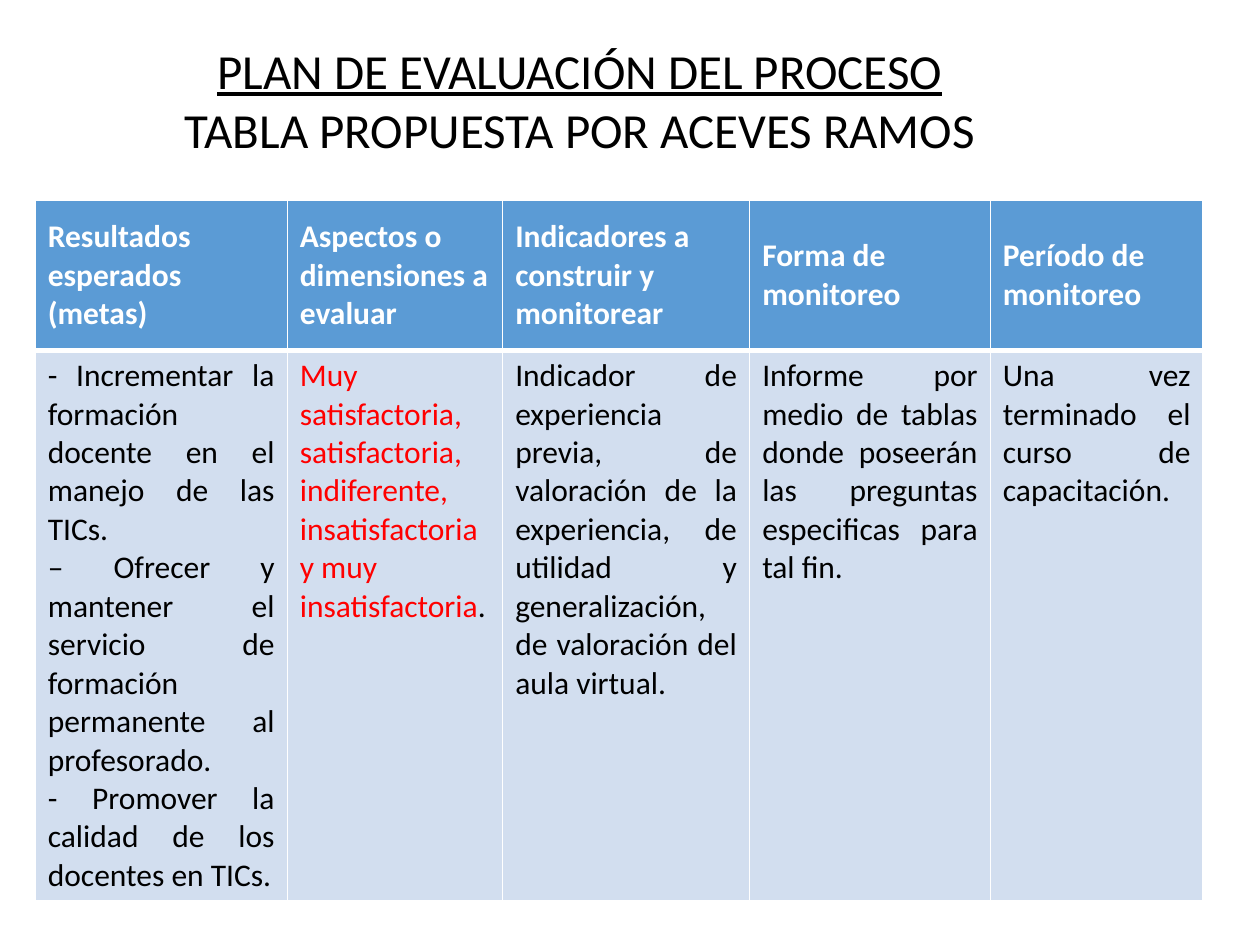
from dataclasses import dataclass

from lxml.etree import SubElement
from pptx import Presentation
from pptx.dml.color import RGBColor as Rgb
from pptx.enum.text import MSO_ANCHOR as Anchor, MSO_AUTO_SIZE as AutoSize, PP_ALIGN as Align
from pptx.oxml.ns import qn
from pptx.util import Inches, Pt


@dataclass(frozen=True)
class Theme:
    font: str = "Calibri"
    title_size: int = 28
    table_size: int = 18
    black: str = "000000"
    white: str = "FFFFFF"
    red: str = "FF0000"
    header_fill: str = "5B9BD5"
    body_fill: str = "D2DEEF"
    thin_line: int = 1
    thick_line: int = 3


THEME = Theme()


@dataclass(frozen=True)
class Span:
    text: str
    color: str = THEME.black
    bold: bool = False
    underline: bool = False


@dataclass(frozen=True)
class Column:
    width: float
    heading: str
    paras: tuple[tuple[Span, ...], ...]
    align: Align = Align.JUSTIFY


COLUMNS = (
    Column(2.0, "Resultados esperados (metas)", (
        (Span("- Incrementar la formación docente en el manejo de las TICs."),),
        (Span("– Ofrecer y mantener el servicio de formación permanente al profesorado."),),
        (Span("- Promover la calidad de los docentes en TICs."),),
    )),
    Column(1.71, "Aspectos o dimensiones a evaluar", ((
        Span("Muy satisfactoria, satisfactoria, indiferente, insatisfactoria "
             "y muy insatisfactoria", THEME.red),
        Span("."),
    ),), Align.LEFT),
    Column(1.96, "Indicadores a construir y monitorear", ((
        Span("Indicador de experiencia previa, de valoración de la experiencia, "
             "de utilidad y generalización, de valoración del aula virtual."),
    ),)),
    Column(1.91, "Forma de monitoreo", ((
        Span("Informe por medio de tablas donde poseerán las preguntas "
             "especificas para tal fin."),
    ),)),
    Column(1.69, "Período de monitoreo", ((
        Span("Una vez terminado el curso de capacitación."),
    ),)),
)
ROW_HEIGHTS = (1.19, 3.5)
TITLE = (
    (Span("PLAN DE EVALUACIÓN DEL PROCESO", underline=True),),
    (Span("TABLA PROPUESTA POR ACEVES RAMOS"),),
)


def write_paras(frame, paras: tuple[tuple[Span, ...], ...], size: int, align: Align) -> None:
    for index, spans in enumerate(paras):
        para = frame.add_paragraph() if index else frame.paragraphs[0]
        para.alignment = align
        for span in spans:
            run = para.add_run()
            run.text = span.text
            formats = {"name": THEME.font, "size": Pt(size),
                       "bold": span.bold, "underline": span.underline}
            for name, value in formats.items():
                setattr(run.font, name, value)
            run.font.color.rgb = Rgb.from_string(span.color)


def set_borders(cell, top: int, bottom: int) -> None:
    """Borders come before the fill in the cell properties."""
    properties = cell._tc.get_or_add_tcPr()
    widths = {"a:lnL": THEME.thin_line, "a:lnR": THEME.thin_line,
              "a:lnT": top, "a:lnB": bottom}
    for index, (tag, width) in enumerate(widths.items()):
        line = SubElement(properties, qn(tag), w=str(Pt(width)))
        fill = SubElement(line, qn("a:solidFill"))
        SubElement(fill, qn("a:srgbClr"), val=THEME.white)
        properties.insert(index, line)


def style_cell(cell, fill: str, anchor: Anchor, top: int, bottom: int) -> None:
    cell.fill.solid()
    cell.fill.fore_color.rgb = Rgb.from_string(fill)
    cell.vertical_anchor = anchor
    set_borders(cell, top, bottom)


def add_title(page) -> None:
    box = page.shapes.add_textbox(Inches(0.65), Inches(0.27), Inches(7.9), Inches(1.04))
    formats = {"word_wrap": True, "auto_size": AutoSize.SHAPE_TO_FIT_TEXT}
    for name, value in formats.items():
        setattr(box.text_frame, name, value)
    write_paras(box.text_frame, TITLE, THEME.title_size, Align.CENTER)


def add_plan_table(page) -> None:
    table = page.shapes.add_table(
        len(ROW_HEIGHTS), len(COLUMNS), Inches(0.28), Inches(1.59),
        Inches(sum(column.width for column in COLUMNS)), Inches(sum(ROW_HEIGHTS)),
    ).table
    for row, height in zip(table.rows, ROW_HEIGHTS):
        row.height = Inches(height)
    for index, column in enumerate(COLUMNS):
        table.columns[index].width = Inches(column.width)
        header, body = table.cell(0, index), table.cell(1, index)
        heading = ((Span(column.heading, THEME.white, bold=True),),)
        write_paras(header.text_frame, heading, THEME.table_size, Align.LEFT)
        write_paras(body.text_frame, column.paras, THEME.table_size, column.align)
        style_cell(header, THEME.header_fill, Anchor.MIDDLE, THEME.thin_line, THEME.thick_line)
        style_cell(body, THEME.body_fill, Anchor.TOP, THEME.thick_line, THEME.thin_line)


def main() -> None:
    deck = Presentation()
    deck.slide_width, deck.slide_height = Inches(10), Inches(7.5)
    page = deck.slides.add_slide(deck.slide_layouts[6])
    # Evaluation plan, then the heading above it
    add_plan_table(page)
    add_title(page)
    deck.save("out.pptx")


if __name__ == "__main__":
    main()
